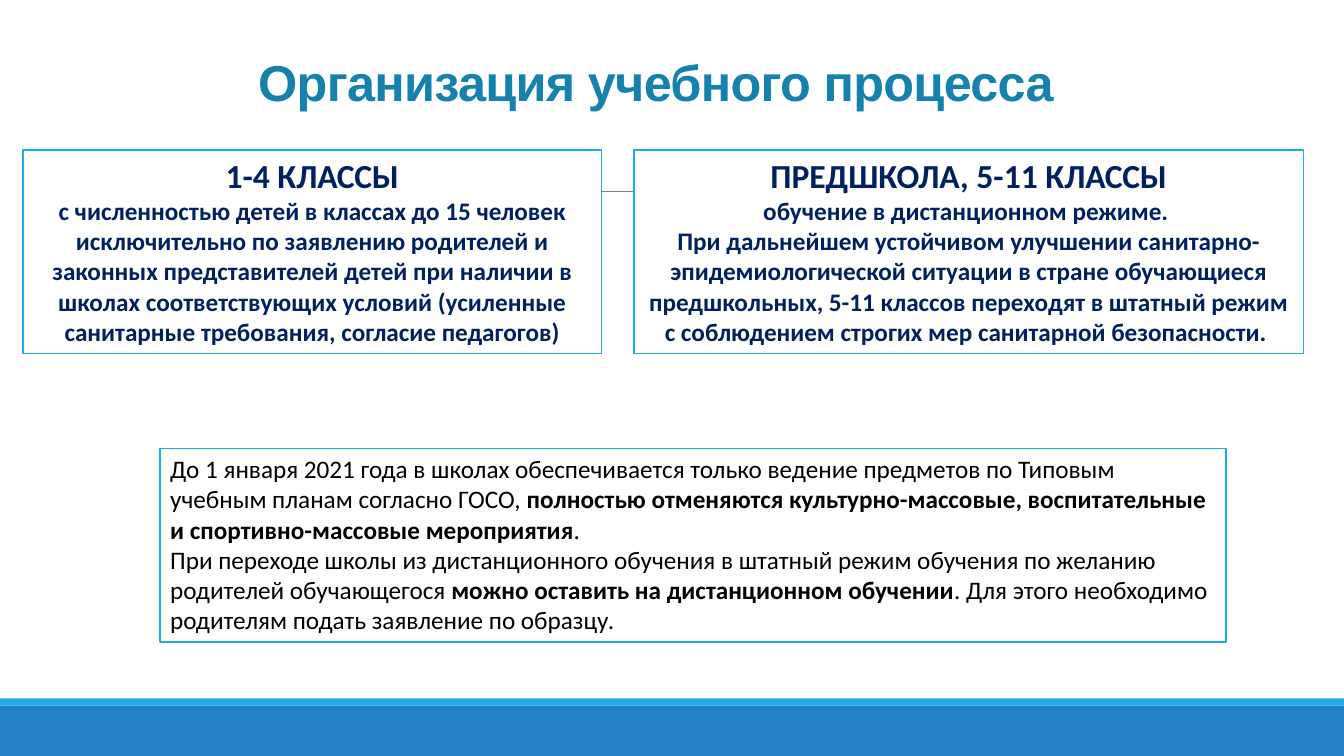
import dataclasses

import pptx
import pptx.dml.color
import pptx.enum.shapes
import pptx.enum.text
import pptx.oxml
import pptx.oxml.ns
import pptx.util

Cm, Pt = pptx.util.Cm, pptx.util.Pt
RGB = pptx.dml.color.RGBColor.from_string
ALIGN = pptx.enum.text.PP_ALIGN
ANCHOR = pptx.enum.text.MSO_ANCHOR
RECT = pptx.enum.shapes.MSO_SHAPE.RECTANGLE


@dataclasses.dataclass(frozen=True)
class Theme:
    title: str = "1482AC"
    navy: str = "002060"
    black: str = "000000"
    white: str = "FFFFFF"
    accent: str = "1CADE4"
    band: str = "2683C6"
    rule: str = "808080"
    title_font: str = "Arial"
    body_font: str = "Calibri"
    title_size: int = 36
    head_size: int = 24
    body_size: int = 18


T = Theme()

# Each paragraph is a list of runs: (text, size, bold)
GRADES_1_4 = [
    [("1-4 КЛАССЫ", T.head_size, True)],
    [("с численностью детей в классах до 15 человек исключительно по заявлению "
      "родителей и законных представителей детей при наличии в школах "
      "соответствующих условий (усиленные санитарные требования, согласие "
      "педагогов)", T.body_size, True)],
]
GRADES_5_11 = [
    [("ПРЕДШКОЛА, 5-11 КЛАССЫ", T.head_size, True)],
    [("обучение в дистанционном режиме. ", T.body_size, True)],
    [("При дальнейшем устойчивом улучшении санитарно-эпидемиологической ситуации "
      "в стране обучающиеся предшкольных, 5-11 классов переходят в штатный режим "
      "с соблюдением строгих мер санитарной безопасности. ", T.body_size, True)],
]
RULES = [
    [("До 1 января 2021 года в школах обеспечивается только ведение предметов по "
      "Типовым учебным планам согласно ГОСО, ", T.body_size, False),
     ("полностью отменяются культурно-массовые, воспитательные и "
      "спортивно-массовые мероприятия", T.body_size, True),
     (".", T.body_size, False)],
    [("При переходе школы из дистанционного обучения в штатный режим обучения по "
      "желанию родителей обучающегося ", T.body_size, False),
     ("можно оставить на дистанционном обучении", T.body_size, True),
     (". Для этого необходимо родителям подать заявление по образцу.",
      T.body_size, False)],
]


def add_run(p, text, font, size, bold, color):
    r = p.add_run()
    r.text = text
    r.font.name, r.font.size, r.font.bold = font, Pt(size), bold
    r.font.color.rgb = RGB(color)
    return r


def add_rect(s, x, y, w, h, fill, line=None):
    sp = s.shapes.add_shape(RECT, Cm(x), Cm(y), Cm(w), Cm(h))
    sp.shadow.inherit = False
    sp.fill.solid()
    sp.fill.fore_color.rgb = RGB(fill)
    if line:
        sp.line.color.rgb = RGB(line)
        sp.line.width = Pt(1.25)
    else:
        sp.line.fill.background()
    return sp


def add_footer(s, x, y, w, h, stripe=0.18):
    add_rect(s, x, y + stripe, w, h - stripe, T.band)
    add_rect(s, x, y, w, stripe, T.accent)


def add_rule(s, x, y, w):
    ln = s.shapes.add_connector(pptx.enum.shapes.MSO_CONNECTOR.STRAIGHT,
                                Cm(x), Cm(y), Cm(x + w), Cm(y))
    ln.line.color.rgb = RGB(T.rule)
    ln.line.width = Pt(0.5)
    ln._element.spPr.append(pptx.oxml.parse_xml(
        "<a:effectLst %s/>" % pptx.oxml.ns.nsdecls("a")))


def add_title(s, x, y, w, h, text):
    sp = s.shapes.title
    sp.left, sp.top, sp.width, sp.height = Cm(x), Cm(y), Cm(w), Cm(h)
    tf = sp.text_frame
    tf.vertical_anchor = ANCHOR.MIDDLE
    p = tf.paragraphs[0]
    p.alignment = ALIGN.CENTER
    r = add_run(p, text, T.title_font, T.title_size, True, T.title)
    r.font._element.set("spc", "-50")


def add_text_box(s, x, y, w, h, paragraphs, color, align):
    tf = add_rect(s, x, y, w, h, T.white, T.accent).text_frame
    tf.word_wrap = True
    tf.auto_size = pptx.enum.text.MSO_AUTO_SIZE.SHAPE_TO_FIT_TEXT
    tf.vertical_anchor = ANCHOR.TOP
    for i, runs in enumerate(paragraphs):
        p = tf.paragraphs[0] if i == 0 else tf.add_paragraph()
        p.alignment = align
        for text, size, bold in runs:
            add_run(p, text, T.body_font, size, bold, color)


def main():
    prs = pptx.Presentation()
    prs.slide_width, prs.slide_height = Cm(33.87), Cm(19.05)
    s = prs.slides.add_slide(prs.slide_layouts[5])

    # Background bands and rule
    add_footer(s, 0, 17.6, 33.87, 1.45)
    add_rule(s, 3.33, 4.83, 27.68)

    # Title
    add_title(s, 0.58, 1.1, 31.9, 1.9, "Организация учебного процесса")

    # Two groups of grades
    add_text_box(s, 0.58, 3.78, 14.58, 5.13, GRADES_1_4, T.navy, ALIGN.CENTER)
    add_text_box(s, 15.98, 3.78, 16.87, 5.13, GRADES_5_11, T.navy, ALIGN.CENTER)

    # General rules
    add_text_box(s, 4.04, 11.3, 26.85, 4.88, RULES, T.black, ALIGN.LEFT)

    prs.save("out.pptx")


if __name__ == "__main__":
    main()
